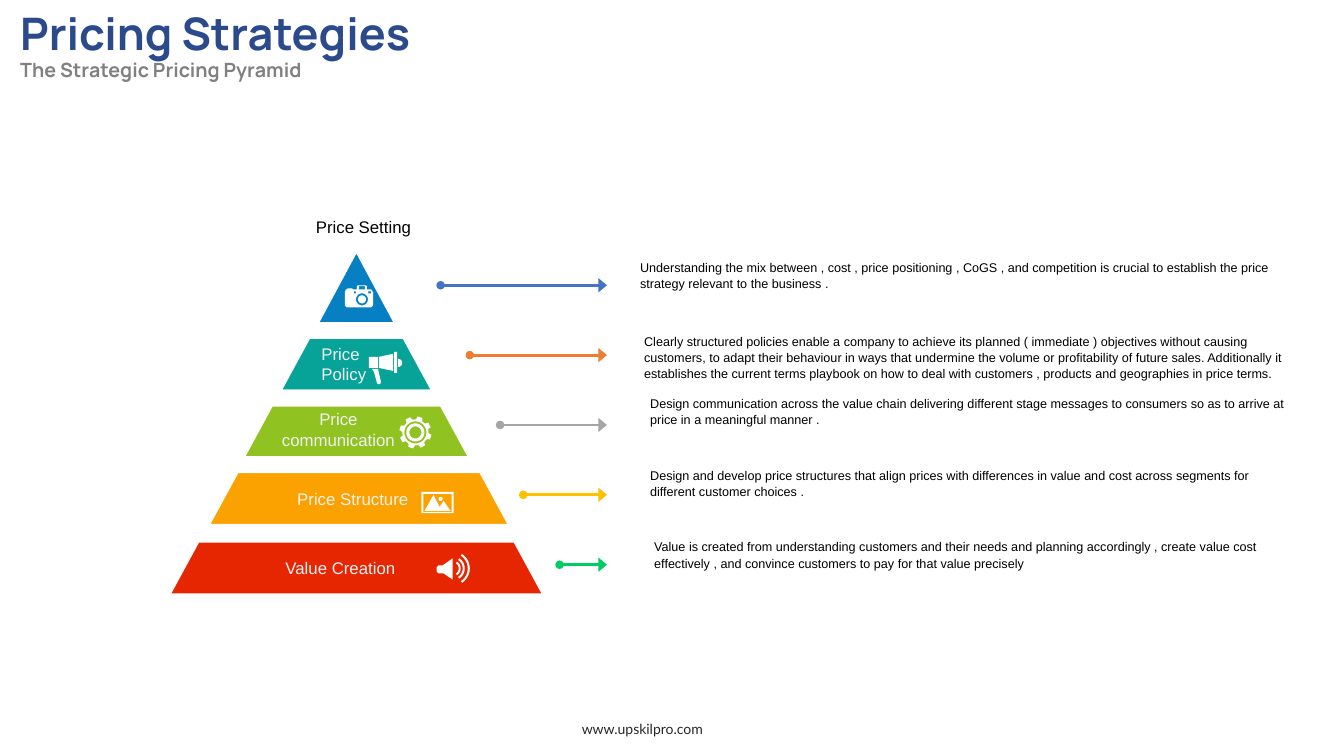
import collections
import math

import lxml.etree
import pptx
import pptx.dml.color
import pptx.enum.shapes
import pptx.enum.text
import pptx.oxml.ns
import pptx.util

Inches = pptx.util.Inches
RGBColor = pptx.dml.color.RGBColor
Align = pptx.enum.text.PP_ALIGN

WHITE = RGBColor(0xFF, 0xFF, 0xFF)
BLACK = RGBColor(0, 0, 0)
NAVY = RGBColor(0x2A, 0x4A, 0x8B)
GREY = RGBColor(0x80, 0x80, 0x80)
PALE = RGBColor(0xF2, 0xF2, 0xF2)
CHARCOAL = RGBColor(0x27, 0x27, 0x27)
TIER_BLUE = RGBColor(0x06, 0x80, 0xC3)
TIER_TEAL = RGBColor(0x07, 0xA3, 0x98)
TIER_GREEN = RGBColor(0x90, 0xC2, 0x21)
TIER_AMBER = RGBColor(0xFB, 0xA2, 0x00)
TIER_RED = RGBColor(0xE6, 0x26, 0x01)
ARROW_BLUE = RGBColor(0x44, 0x72, 0xC4)
ARROW_ORANGE = RGBColor(0xED, 0x7D, 0x31)
ARROW_GREY = RGBColor(0xA5, 0xA5, 0xA5)
ARROW_GOLD = RGBColor(0xFF, 0xC0, 0x00)
ARROW_GREEN = RGBColor(0x00, 0xCC, 0x66)


def arc(x, y, radius, start=0, end=360):
    steps = 24
    angles = [math.radians(start + (end - start) * i / steps) for i in range(steps + 1)]
    return [(x + radius * math.cos(a), y + radius * math.sin(a)) for a in angles]


def rectangle(left, top, right, bottom):
    return [(left, top), (right, top), (right, bottom), (left, bottom)]


def gear_outline(x, y, teeth=8):
    outline = []
    for tooth in range(teeth):
        for offset, radius in ((-14, 0.13), (-9, 0.16), (9, 0.16), (14, 0.13)):
            angle = math.radians(17 + 360 / teeth * tooth + offset)
            outline.append((x + radius * math.cos(angle), y + radius * math.sin(angle)))
    return outline


def sound_wave(radius):
    return arc(0.16, 0.14, radius, -57, 57) + arc(0.16, 0.14, radius - 0.02, 57, -57)


# Each icon is a list of outlines in inches; inner outlines cut holes.
CAMERA = [
    [(0, 0.07), (0.01, 0.04), (0.02, 0.04), (0.03, 0.03), (0.07, 0.03), (0.08, 0.04),
     (0.12, 0.04), (0.12, 0.01), (0.13, 0), (0.21, 0), (0.22, 0.01), (0.22, 0.04),
     (0.26, 0.04), (0.28, 0.07), (0.28, 0.2), (0.26, 0.22), (0.02, 0.22), (0, 0.2)],
    rectangle(0.14, 0.01, 0.2, 0.04), rectangle(0.09, 0.06, 0.11, 0.08),
    rectangle(0.23, 0.06, 0.26, 0.08), arc(0.17, 0.14, 0.06), arc(0.17, 0.14, 0.04)]
MEGAPHONE = [
    [(0.03, 0.17), (0.09, 0.17), (0.12, 0.3), (0.11, 0.32), (0.09, 0.32), (0.08, 0.31),
     (0.05, 0.2)],
    rectangle(0, 0.05, 0.09, 0.16), [(0.24, 0.02), (0.24, 0.19), (0.1, 0.16), (0.1, 0.05)],
    rectangle(0.25, 0, 0.28, 0.21), arc(0.29, 0.11, 0.04, -90, 90)]
GEAR = [gear_outline(0.16, 0.16)] + [arc(0.16, 0.16, r) for r in (0.11, 0.09, 0.06)]
LANDSCAPE = [
    rectangle(0, 0, 0.32, 0.21), rectangle(0.02, 0.02, 0.3, 0.2),
    [(0.12, 0.03), (0.18, 0.15), (0.22, 0.09), (0.29, 0.19), (0.03, 0.19)],
    arc(0.19, 0.07, 0.02)]
SPEAKER = [
    [(0.16, 0.04), (0.16, 0.25), (0.07, 0.19), (0.02, 0.19), (0, 0.17), (0, 0.13),
     (0.02, 0.11), (0.06, 0.11)]] + [sound_wave(r) for r in (0.08, 0.12, 0.17)]

# Boxes and points are offsets in inches from the corner of the pyramid.
Tier = collections.namedtuple("Tier", "box color icon icon_at label label_box align label_color")
TIERS = [
    Tier((1.47, 0.24, 1.01, 0.94), TIER_BLUE, CAMERA, (1.86, 0.73),
         ["Price Setting"], (1.47, 0, 1.15, 0.3), Align.CENTER, BLACK),
    Tier((1.1, 1.18, 1.75, 0.67), TIER_TEAL, MEGAPHONE, (2.1, 1.39),
         ["Price", "Policy"], (1.53, 1.26, 0.7, 0.5), Align.LEFT, PALE),
    Tier((0.73, 1.85, 2.49, 0.67), TIER_GREEN, GEAR, (2.4, 2.03),
         ["Price ", "communication "], (0.85, 1.91, 1.94, 0.5), Align.CENTER, PALE),
    Tier((0.39, 2.51, 3.22, 0.67), TIER_AMBER, LANDSCAPE, (2.62, 2.78),
         ["Price Structure"], (1.29, 2.7, 1.94, 0.3), Align.LEFT, PALE),
    Tier((0, 3.2, 3.95, 0.67), TIER_RED, SPEAKER, (2.77, 3.4),
         ["Value Creation "], (0.87, 3.38, 1.94, 0.3), Align.CENTER, PALE)]

# Offsets in inches from the start of the first arrow.
Note = collections.namedtuple("Note", "arrow_start color box text")
NOTES = [
    Note(0, ARROW_BLUE, (1.88, -0.31, 6.68, 0.4),
         "Understanding the mix between , cost , price positioning , CoGS , and competition is "
         "crucial to establish the price strategy relevant to the business ."),
    Note(0.29, ARROW_ORANGE, (1.92, 0.42, 6.68, 0.56),
         "Clearly structured policies enable a company to achieve its planned ( immediate ) "
         "objectives without causing customers, to adapt their behaviour in ways that undermine "
         "the volume or profitability of future sales. Additionally it establishes the current "
         "terms playbook on how to deal with customers , products and geographies in price terms."),
    Note(0.59, ARROW_GREY, (1.98, 1.04, 6.62, 0.4),
         "Design communication across the value chain delivering different stage messages to "
         "consumers so as to arrive at price in a meaningful manner ."),
    Note(0.82, ARROW_GOLD, (1.98, 1.75, 6.32, 0.5),
         "Design and develop price structures that align prices with differences in value and "
         "cost across segments for different customer choices ."),
    Note(1.18, ARROW_GREEN, (2.02, 2.46, 6.82, 0.5),
         "Value is created from understanding customers and their needs and planning accordingly "
         ", create value cost effectively , and convince customers to pay for that value "
         "precisely")]


def place(left, top, box):
    x, y, width, height = box
    return Inches(left + x), Inches(top + y), Inches(width), Inches(height)


def write_text(shape, lines, size, color, font="Arial", bold=False, align=Align.LEFT, spacing=1.0):
    frame = shape.text_frame
    frame.word_wrap = True
    frame.auto_size = pptx.enum.text.MSO_AUTO_SIZE.NONE
    frame.vertical_anchor = pptx.enum.text.MSO_ANCHOR.TOP
    frame.text = "\n".join(lines)
    for paragraph in frame.paragraphs:
        paragraph.alignment = align
        paragraph.line_spacing = spacing
        for run in paragraph.runs:
            run.font.name = font
            run.font.size = pptx.util.Pt(size)
            run.font.bold = bold
            run.font.color.rgb = color


def add_icon(slide, outlines, left, top):
    builder = None
    for outline in outlines:
        points = [(Inches(left + x), Inches(top + y)) for x, y in outline]
        if builder is None:
            builder = slide.shapes.build_freeform(*points[0])
        else:
            builder.move_to(*points[0])
        builder.add_line_segments(points[1:], close=True)
    icon = builder.convert_to_shape()
    icon.shadow.inherit = False
    icon.fill.solid()
    icon.fill.fore_color.rgb = WHITE
    icon.line.fill.background()


def add_arrow(slide, start, end, y, color):
    arrow = slide.shapes.add_connector(pptx.enum.shapes.MSO_CONNECTOR.STRAIGHT,
                                       Inches(start), Inches(y), Inches(end), Inches(y))
    arrow.line.color.rgb = color
    arrow.line.width = pptx.util.Pt(2)
    qn = pptx.oxml.ns.qn
    line = arrow.line._get_or_add_ln()
    lxml.etree.SubElement(line, qn("a:headEnd"), type="oval")
    lxml.etree.SubElement(line, qn("a:tailEnd"), type="triangle", w="lg", len="med")
    lxml.etree.SubElement(arrow._element.spPr, qn("a:effectLst"))


def add_heading(slide, left, top, width, height):
    title = slide.shapes.title
    title.left, title.top, title.width, title.height = place(left, top, (0, 0, width, height))
    write_text(title, ["Pricing Strategies", "The Strategic Pricing Pyramid"], 32, NAVY,
               font="Manrope", bold=True, spacing=0.9)
    subtitle_font = title.text_frame.paragraphs[1].runs[0].font
    subtitle_font.size = pptx.util.Pt(14)
    subtitle_font.color.rgb = GREY


def add_pyramid(slide, left, top):
    for tier in TIERS:
        block = slide.shapes.add_shape(pptx.enum.shapes.MSO_SHAPE.TRAPEZOID,
                                       *place(left, top, tier.box))
        block.adjustments[0] = 0.544
        block.shadow.inherit = False
        block.fill.solid()
        block.fill.fore_color.rgb = tier.color
        block.line.color.rgb = WHITE
        block.line.width = pptx.util.Pt(12)
    for tier in TIERS:
        add_icon(slide, tier.icon, left + tier.icon_at[0], top + tier.icon_at[1])
        label = slide.shapes.add_textbox(*place(left, top, tier.label_box))
        write_text(label, tier.label, 12, tier.label_color, align=tier.align)


def add_notes_column(slide, left, top, arrow_length=1.65, row_height=0.693):
    for row, note in enumerate(NOTES):
        add_arrow(slide, left + note.arrow_start, left + arrow_length,
                  top + row * row_height, note.color)
        description = slide.shapes.add_textbox(*place(left, top, note.box))
        write_text(description, [note.text], 9, BLACK, spacing=1.07)


def add_website(slide, left, top, width, height):
    website = slide.shapes.add_textbox(*place(left, top, (0, 0, width, height)))
    write_text(website, ["www.upskilpro.com"], 10, CHARCOAL, font="Lato", align=Align.CENTER)


def main():
    presentation = pptx.Presentation()
    presentation.slide_width = Inches(13.33)
    presentation.slide_height = Inches(7.5)
    slide = presentation.slides.add_slide(presentation.slide_layouts[5])
    add_heading(slide, 0.1, 0.07, 10.53, 0.88)
    add_pyramid(slide, 1.56, 2.1)
    add_notes_column(slide, 4.37, 2.83)
    add_website(slide, 4.12, 7.1, 4.5, 0.4)
    presentation.save("out.pptx")


if __name__ == "__main__":
    main()
